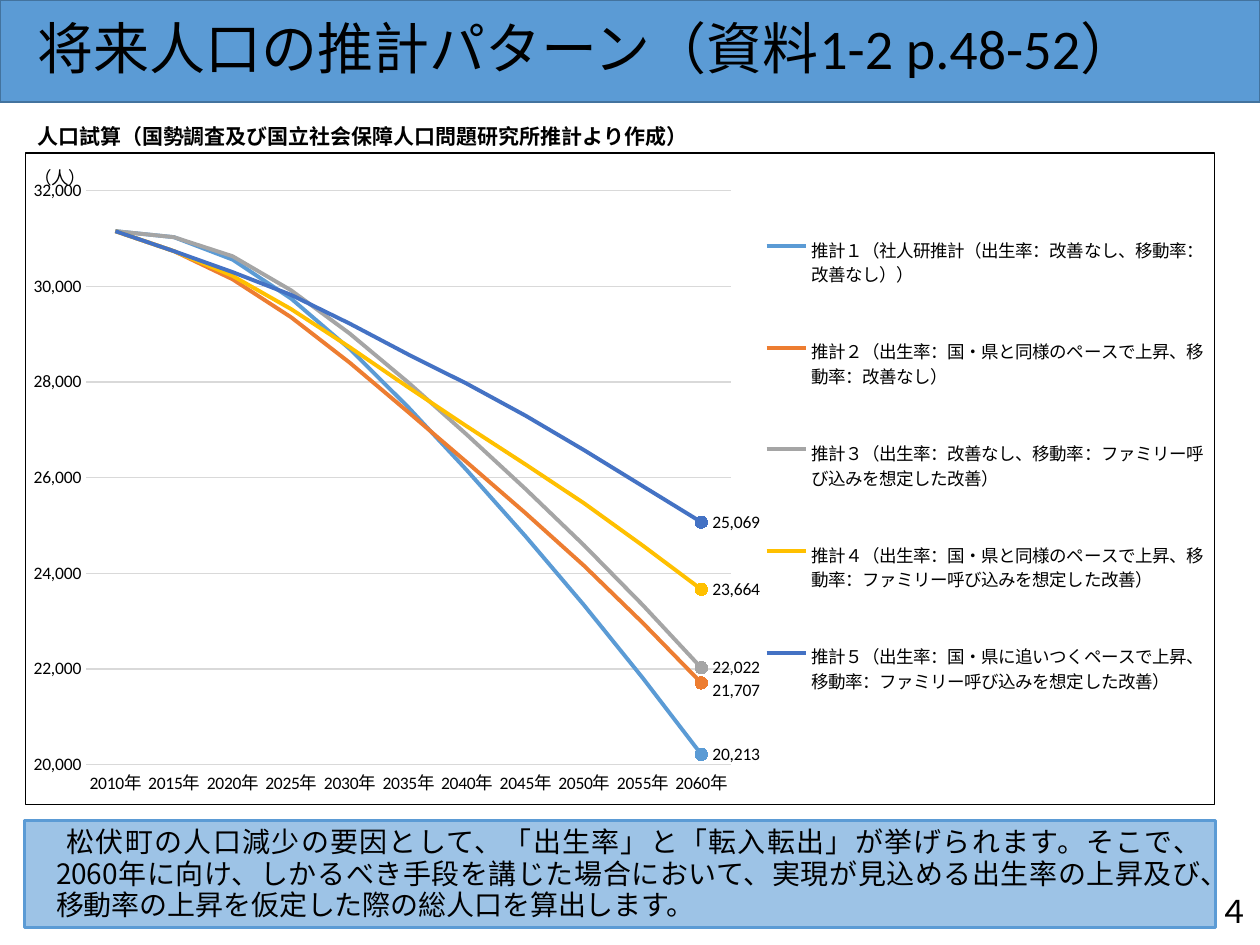
import pptx
import pptx.chart.data
import pptx.dml.color
import pptx.enum.chart
import pptx.enum.shapes
import pptx.enum.text
import pptx.oxml
import pptx.util
from pptx.util import Cm, Pt

ALIGN = pptx.enum.text.PP_ALIGN
ANCHOR = pptx.enum.text.MSO_ANCHOR
CHART_NS = 'xmlns:c="http://schemas.openxmlformats.org/drawingml/2006/chart"'


def color(value):
    """Turn a hex string into an RGB colour."""
    return pptx.dml.color.RGBColor.from_string(value)


def write(shape, text, size, font="Calibri", bold=False, align=ALIGN.LEFT,
          anchor=ANCHOR.MIDDLE, spacing=1.0, margins=(0.25, 0.13)):
    """Put one formatted paragraph into a shape and return the paragraph."""
    frame = shape.text_frame
    frame.word_wrap = True
    frame.auto_size = pptx.enum.text.MSO_AUTO_SIZE.NONE
    frame.vertical_anchor = anchor
    frame.margin_left = frame.margin_right = Cm(margins[0])
    frame.margin_top = frame.margin_bottom = Cm(margins[1])
    paragraph = frame.paragraphs[0]
    paragraph.alignment = align
    paragraph.line_spacing = spacing
    run = paragraph.add_run()
    run.text = text
    run.font.size = Pt(size)
    run.font.name = font
    run.font.bold = bold
    run.font.color.rgb = color("000000")
    return paragraph


presentation = pptx.Presentation()
presentation.slide_width, presentation.slide_height = Cm(25.4), Cm(19.05)
slide = presentation.slides.add_slide(presentation.slide_layouts[5])
shapes = slide.shapes

# Title band and summary panel
panels = []
for left, top, width, height, fill, line, weight in (
        (0, 0, 25.4, 2.06, "5B9BD5", "43739E", 1),
        (0.5, 16.54, 24, 2.16, "9DC3E6", "5B9BD5", 1.5)):
    panel = shapes.add_shape(pptx.enum.shapes.MSO_SHAPE.RECTANGLE,
                             Cm(left), Cm(top), Cm(width), Cm(height))
    panel.shadow.inherit = False
    panel.fill.solid()
    panel.fill.fore_color.rgb = color(fill)
    panel.line.color.rgb = color(line)
    panel.line.width = Pt(weight)
    panels.append(panel)

title = shapes.title
title.left, title.top, title.width, title.height = Cm(0.5), Cm(0.3), Cm(25.63), Cm(1.45)
write(title, "将来人口の推計パターン（資料1-2 p.48-52）", 32, spacing=0.9)
panels[0]._element.addnext(title._element)

summary = write(
    panels[1],
    "　松伏町の人口減少の要因として、「出生率」と「転入転出」が挙げられます。そこで、"
    "2060年に向け、しかるべき手段を講じた場合において、実現が見込める出生率の上昇及び、"
    "移動率の上昇を仮定した際の総人口を算出します。",
    16, font="Noto Sans CJK JP", align=ALIGN.JUSTIFY, anchor=ANCHOR.TOP, spacing=Pt(18))
summary._p.get_or_add_pPr().set("marL", str(Cm(0.38)))
summary._p.get_or_add_pPr().set("indent", str(Cm(-0.38)))

page_number = shapes.add_textbox(Cm(23.4), Cm(17.45), Cm(2.95), Cm(1.83))
write(page_number, "４", 18, align=ALIGN.CENTER)

# Population projections
projections = (
    ("推計１（社人研推計（出生率：改善なし、移動率：改善なし））", "5B9BD5",
     (31153, 31026, 30559, 29743, 28689, 27470, 26152, 24772, 23331, 21811, 20213)),
    ("推計２（出生率：国・県と同様のペースで上昇、移動率：改善なし）", "ED7D31",
     (31153, 30735, 30147, 29352, 28401, 27368, 26319, 25257, 24156, 22964, 21707)),
    ("推計３（出生率：改善なし、移動率：ファミリー呼び込みを想定した改善）", "A5A5A5",
     (31153, 31026, 30629, 29915, 29011, 27987, 26895, 25762, 24584, 23336, 22022)),
    ("推計４（出生率：国・県と同様のペースで上昇、移動率：ファミリー呼び込みを想定した改善）", "FFC000",
     (31153, 30735, 30218, 29524, 28725, 27887, 27071, 26275, 25463, 24580, 23664)),
    ("推計５（出生率：国・県に追いつくペースで上昇、移動率：ファミリー呼び込みを想定した改善）", "4472C4",
     (31153, 30735, 30297, 29820, 29219, 28574, 27962, 27295, 26575, 25821, 25069)),
)
chart_data = pptx.chart.data.CategoryChartData(number_format="#,##0")
chart_data.categories = [f"{year}年" for year in range(2010, 2061, 5)]
for name, _, values in projections:
    chart_data.add_series(name, values)
chart = shapes.add_chart(pptx.enum.chart.XL_CHART_TYPE.LINE, Cm(0.5), Cm(3.07),
                         Cm(24), Cm(13.16), chart_data).chart
chart.has_title = False
chart.font.size = Pt(10)
chart.font.name = "Calibri"
chart.font.color.rgb = color("000000")
chart.plots[0].vary_by_categories = False

for series, (_, line_color, values) in zip(chart.plots[0].series, projections):
    series.smooth = False
    series.format.line.color.rgb = color(line_color)
    series.format.line.width = Pt(2.25)
    series.marker.style = pptx.enum.chart.XL_MARKER_STYLE.NONE
    last_point = series.points[len(values) - 1]
    last_point.format.line.color.rgb = color(line_color)
    last_point.format.line.width = Pt(2.25)
    marker = last_point.marker
    marker.style = pptx.enum.chart.XL_MARKER_STYLE.CIRCLE
    marker.size = 7
    marker.format.fill.solid()
    marker.format.fill.fore_color.rgb = color(line_color)
    marker.format.line.color.rgb = color(line_color)
    last_point.data_label.position = pptx.enum.chart.XL_LABEL_POSITION.RIGHT

no_ticks = pptx.enum.chart.XL_TICK_MARK.NONE
years, population = chart.category_axis, chart.value_axis
for axis in (years, population):
    axis.major_tick_mark = axis.minor_tick_mark = no_ticks
    axis.tick_labels.font.size = Pt(10)
    axis.tick_labels.font.name = "Calibri"
    axis.tick_labels.font.color.rgb = color("000000")
for line in (years.format.line, population.major_gridlines.format.line):
    line.color.rgb = color("D9D9D9")
    line.width = Pt(0.75)
population.format.line.fill.background()
population.minimum_scale, population.maximum_scale = 20000, 32000
population.major_unit = 2000
population.tick_labels.number_format = "#,##0"
population.tick_labels.number_format_is_linked = False
unit = population.axis_title.text_frame
unit.text = "（人）"
unit._txBody.bodyPr.set("rot", "0")
unit._txBody.bodyPr.set("vert", "horz")
unit_font = unit.paragraphs[0].runs[0].font
unit_font.size, unit_font.bold = Pt(10), False
unit_font.color.rgb = color("000000")

chart.has_legend = True
legend = chart.legend
legend.position = pptx.enum.chart.XL_LEGEND_POSITION.BOTTOM
legend.include_in_layout = False
legend.font.size = Pt(10)
legend.font.name = "Calibri"
legend.font.color.rgb = color("000000")

# Fixed places inside the chart, as fractions of its size
plot_area = chart._chartSpace.chart.plotArea
crowded_label = plot_area.xpath(".//c:ser[2]//c:dLbl")[0]
for parent, index, inner, fractions in (
        (plot_area, 0, True, {"x": 0.051, "y": 0.058, "w": 0.542, "h": 0.881}),
        (legend._element, 1, False, {"x": 0.625, "y": 0.05, "w": 0.37, "h": 0.86}),
        (population.axis_title._element, 1, False, {"x": 0.005, "y": 0.01}),
        (crowded_label, 1, None, {"x": 0, "y": 0.012})):
    for old_layout in parent.xpath("./c:layout"):
        parent.remove(old_layout)
    parts = '<c:layoutTarget val="inner"/>' if inner else ""
    if inner is not None:
        parts += '<c:xMode val="edge"/><c:yMode val="edge"/>'
    parts += "".join(f'<c:{key} val="{value}"/>' for key, value in fractions.items())
    parent.insert(index, pptx.oxml.parse_xml(
        f"<c:layout {CHART_NS}><c:manualLayout>{parts}</c:manualLayout></c:layout>"))

# Chart background and border
chart._chartSpace.chart.addnext(pptx.oxml.parse_xml(
    f'<c:spPr {CHART_NS} xmlns:a="http://schemas.openxmlformats.org/drawingml/2006/main">'
    '<a:solidFill><a:srgbClr val="FFFFFF"/></a:solidFill><a:ln w="9525"><a:solidFill>'
    '<a:srgbClr val="000000"/></a:solidFill></a:ln></c:spPr>'))

caption = shapes.add_textbox(Cm(0.5), Cm(2.54), Cm(20.19), Cm(0.91))
write(caption, "人口試算（国勢調査及び国立社会保障人口問題研究所推計より作成）", 12,
      bold=True, anchor=ANCHOR.TOP, spacing=0.9, margins=(0.25, 0))

presentation.save("out.pptx")
